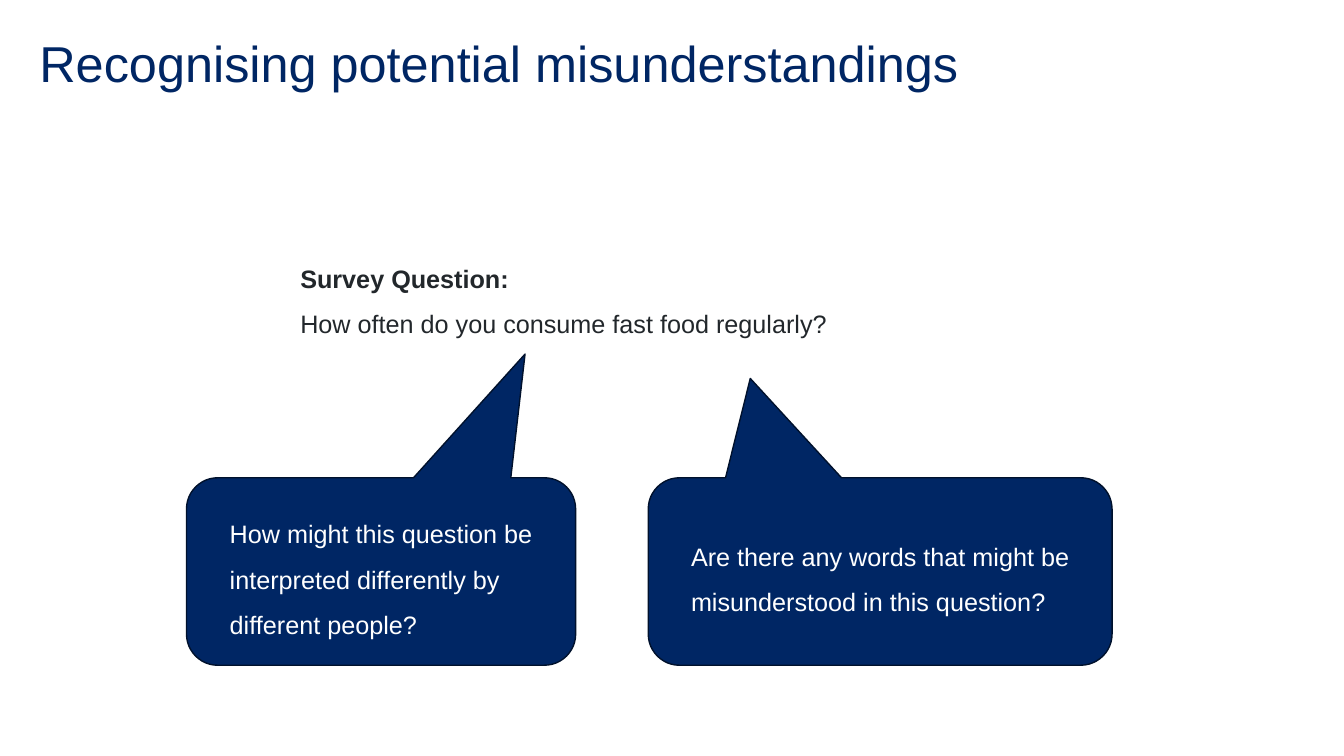
"""Build the slide on recognising potential misunderstandings in a survey question."""
from pptx import Presentation
from pptx.dml.color import RGBColor
from pptx.enum.shapes import MSO_SHAPE as Preset
from pptx.enum.text import MSO_ANCHOR as Anchor, MSO_AUTO_SIZE as AutoSize, PP_ALIGN as Align
from pptx.util import Inches, Pt

NAVY, EDGE, INK, WHITE = "002664", "00112C", "22272B", "FFFFFF"


def colour(hex_code):
    return RGBColor.from_string(hex_code)


def add_run(paragraph, text, size, hex_code, bold=False):
    run = paragraph.add_run()
    run.text = text
    run.font.name = "Arial"
    run.font.size = Pt(size)
    run.font.bold = bold
    run.font.color.rgb = colour(hex_code)


deck = Presentation()
deck.slide_width, deck.slide_height = Inches(13.33), Inches(7.5)
slide = deck.slides.add_slide(deck.slide_layouts[5])

title = slide.shapes.title
title.left, title.top = Inches(0.39), Inches(0.39)
title.width, title.height = Inches(12.56), Inches(0.6)
heading = title.text_frame
heading.margin_left = heading.margin_right = heading.margin_top = heading.margin_bottom = 0
heading.vertical_anchor = Anchor.TOP
heading.auto_size = AutoSize.NONE
heading_line = heading.paragraphs[0]
heading_line.alignment = Align.LEFT
heading_line.line_spacing = 0.9
add_run(heading_line, "Recognising potential misunderstandings", 36, NAVY)

survey = slide.shapes.add_textbox(Inches(2.88), Inches(2.41), Inches(6.27), Inches(0.95)).text_frame
survey.word_wrap = True
survey.auto_size = AutoSize.SHAPE_TO_FIT_TEXT
question = survey.paragraphs[0]
question.line_spacing = 1.5
question.space_after = Pt(8)
add_run(question, "Survey Question:", 18, INK, bold=True)
question.add_line_break()
add_run(question, "How often do you consume fast food regularly?", 18, INK)

prompts = [
    (1.85, 3.86, (0.37, -1.16),
     "How might this question be interpreted differently by different people?"),
    (6.43, 4.6, (-0.28, -1.03),
     "Are there any words that might be misunderstood in this question?"),
]
for left, width, (tip_x, tip_y), prompt in prompts:
    callout = slide.shapes.add_shape(
        Preset.ROUNDED_RECTANGULAR_CALLOUT, Inches(left), Inches(4.74), Inches(width), Inches(1.86))
    callout.adjustments[0] = tip_x
    callout.adjustments[1] = tip_y
    callout.shadow.inherit = False
    callout.fill.solid()
    callout.fill.fore_color.rgb = colour(NAVY)
    callout.line.color.rgb = colour(EDGE)
    callout.line.width = Pt(1)
    callout.text_frame.word_wrap = True
    callout.text_frame.vertical_anchor = Anchor.MIDDLE
    callout.element.txBody.bodyPr.set("anchorCtr", "1")
    prompt_line = callout.text_frame.paragraphs[0]
    prompt_line.alignment = Align.LEFT
    prompt_line.line_spacing = 1.5
    add_run(prompt_line, prompt, 18, WHITE)

deck.save("out.pptx")
